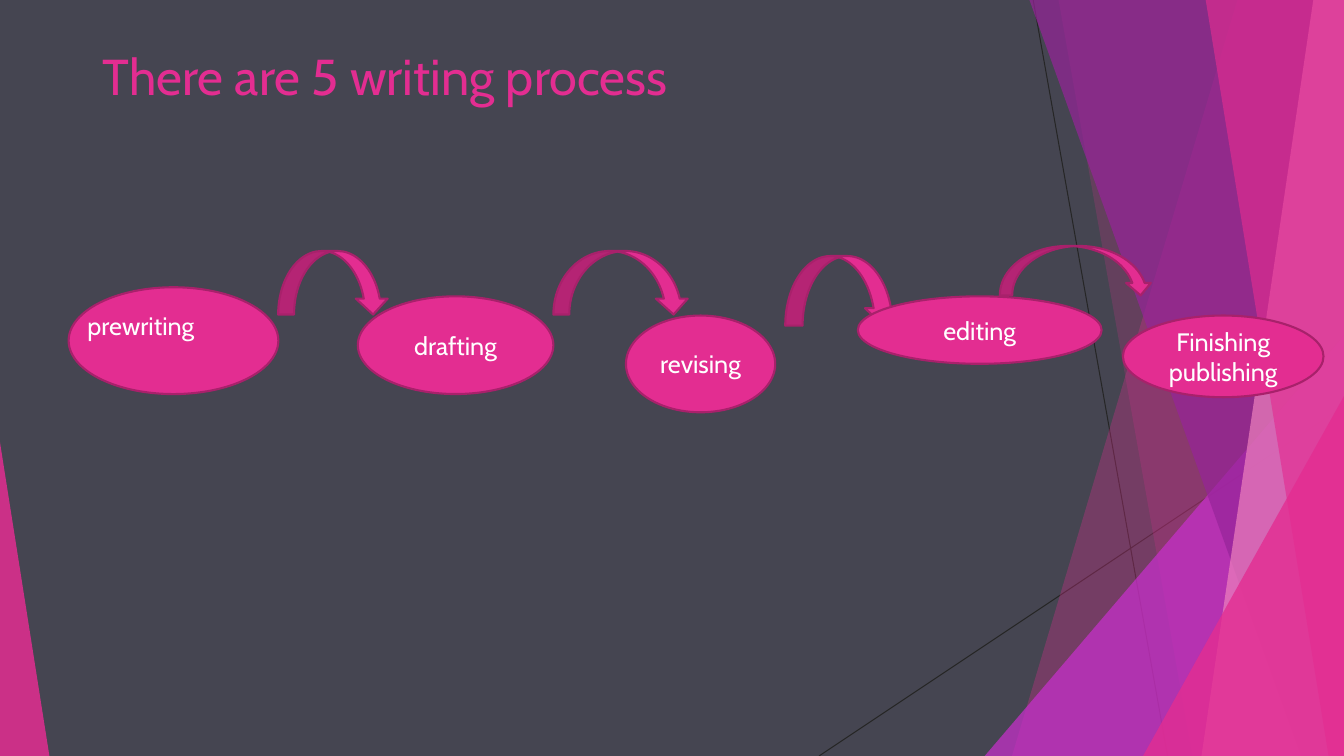
"""Build a slide that shows the five steps of writing as a chain of ovals."""
from typing import NamedTuple, Optional

from lxml import etree
from pptx import Presentation
from pptx.dml.color import RGBColor
from pptx.enum.shapes import MSO_CONNECTOR, MSO_SHAPE
from pptx.enum.text import MSO_ANCHOR, MSO_AUTO_SIZE, PP_ALIGN
from pptx.oxml.ns import qn
from pptx.util import Pt

OVAL = MSO_SHAPE.OVAL
ARROW = MSO_SHAPE.CURVED_DOWN_ARROW
WEDGE = MSO_SHAPE.ISOSCELES_TRIANGLE
STRAIGHT = MSO_CONNECTOR.STRAIGHT
TOP, MIDDLE = MSO_ANCHOR.TOP, MSO_ANCHOR.MIDDLE
LEFT, CENTER = PP_ALIGN.LEFT, PP_ALIGN.CENTER
GROW, FIXED = MSO_AUTO_SIZE.SHAPE_TO_FIT_TEXT, MSO_AUTO_SIZE.NONE

WIDE, HIGH = 960, 540
EDGE = -0.7
FONT = "Cabin"
PINK, DARK, WHITE = "E32D91", "A8216B", "FFFFFF"
BACK, THIN = "454551", "262626"


class Box(NamedTuple):
    x: float
    y: float
    w: float
    h: float


class Ray(NamedTuple):
    start: tuple[float, float]
    end: tuple[float, float]


class Band(NamedTuple):
    top: float
    foot: float
    color: str
    alpha: int


class Peak(NamedTuple):
    box: Box
    tip: float
    color: str
    alpha: int


class Step(NamedTuple):
    text: str
    oval: Box
    arrow: Optional[Box] = None
    label: Optional[Box] = None


RAYS = [Ray((738, 0), (834, HIGH)), Ray((WIDE, 290), (585, HIGH))]
DECOR = [
    Band(884.2, 722.9, PINK, 30),
    Band(756, 851.8, PINK, 20),
    Peak(Box(703.4, 239.8, 256.6, 300.2), 1, "C830CC", 72),
    Band(735.1, 929.5, "962499", 70),
    Band(938.2, 858.2, "EE81BD", 70),
    Band(861.1, 949, PINK, 65),
    Peak(Box(816.5, 283, 143.5, 257), 1, PINK, 80),
    Peak(Box(0, 316, 35.3, 224), 0, PINK, 85),
]
STEPS = [
    Step("prewriting", Box(49, 205.2, 149.8, 76.3),
         label=Box(55.4, 218.2, 136.8, 28.8)),
    Step("drafting", Box(255.6, 211.7, 139.7, 69.8),
         Box(198.7, 179.3, 79.2, 45.4)),
    Step("revising", Box(447.1, 225.4, 106.6, 69.1),
         Box(395.3, 179.3, 97.2, 45.4)),
    Step("editing", Box(612.7, 211.7, 174.2, 48.2),
         Box(560.9, 182.9, 82.8, 49.7)),
    Step("Finishing publishing", Box(802.1, 225.4, 143.3, 58.3),
         Box(714.2, 175.7, 109.4, 35.3)),
]


def paint(part, color: str) -> None:
    part.solid()
    part.fore_color.rgb = RGBColor.from_string(color)


def place(box: Box) -> list[Pt]:
    return [Pt(side) for side in box]


def write(shape, text: str, *, size: float = 18, color: str = WHITE,
          align=CENTER, anchor=MIDDLE, fit=FIXED) -> None:
    frame = shape.text_frame
    frame.word_wrap = True
    frame.auto_size = fit
    frame.vertical_anchor = anchor
    line = frame.paragraphs[0]
    line.alignment = align
    run = line.add_run()
    run.text = text
    run.font.name = FONT
    run.font.size = Pt(size)
    run.font.color.rgb = RGBColor.from_string(color)


def draw_ray(slide, ray: Ray) -> None:
    ends = [Pt(v) for v in (*ray.start, *ray.end)]
    link = slide.shapes.add_connector(STRAIGHT, *ends)
    paint(link.line.fill, THIN)
    link.line.width = Pt(0.75)
    etree.SubElement(link.element.spPr, qn("a:effectLst"))


def tint(shape, color: str, alpha: int) -> None:
    shape.shadow.inherit = False
    paint(shape.fill, color)
    tone = shape.element.spPr.find(f"{qn('a:solidFill')}/{qn('a:srgbClr')}")
    etree.SubElement(tone, qn("a:alpha"), val=str(alpha * 1000))
    shape.line.fill.background()


def draw_band(slide, band: Band) -> None:
    path = slide.shapes.build_freeform(Pt(band.top), Pt(EDGE))
    spots = [(WIDE, EDGE), (WIDE, HIGH), (band.foot, HIGH)]
    path.add_line_segments([(Pt(x), Pt(y)) for x, y in spots])
    tint(path.convert_to_shape(), band.color, band.alpha)


def draw_peak(slide, peak: Peak) -> None:
    shape = slide.shapes.add_shape(WEDGE, *place(peak.box))
    shape.adjustments[0] = peak.tip
    tint(shape, peak.color, peak.alpha)


def draw_form(slide, kind, box: Box):
    shape = slide.shapes.add_shape(kind, *place(box))
    shape.shadow.inherit = False
    paint(shape.fill, PINK)
    paint(shape.line.fill, DARK)
    shape.line.width = Pt(1.5)
    return shape


def draw_step(slide, step: Step) -> None:
    if step.arrow:
        draw_form(slide, ARROW, step.arrow)
    oval = draw_form(slide, OVAL, step.oval)
    if step.label:
        label = slide.shapes.add_textbox(*place(step.label))
        write(label, step.text, align=LEFT, anchor=TOP, fit=GROW)
    else:
        write(oval, step.text)


def draw_title(slide) -> None:
    title = slide.shapes.title
    title.left, title.top, title.width, title.height = place(
        Box(66, 28.8, 828, 252))
    write(title, "There are 5 writing process", size=36, color=PINK,
          align=LEFT, anchor=TOP)
    title.element.getparent().append(title.element)


def main() -> None:
    deck = Presentation()
    deck.slide_width, deck.slide_height = Pt(WIDE), Pt(HIGH)
    slide = deck.slides.add_slide(deck.slide_layouts[5])
    paint(slide.background.fill, BACK)
    for ray in RAYS:
        draw_ray(slide, ray)
    for item in DECOR:
        if isinstance(item, Band):
            draw_band(slide, item)
        else:
            draw_peak(slide, item)
    draw_title(slide)
    for step in STEPS:
        draw_step(slide, step)
    deck.save("out.pptx")


if __name__ == "__main__":
    main()
